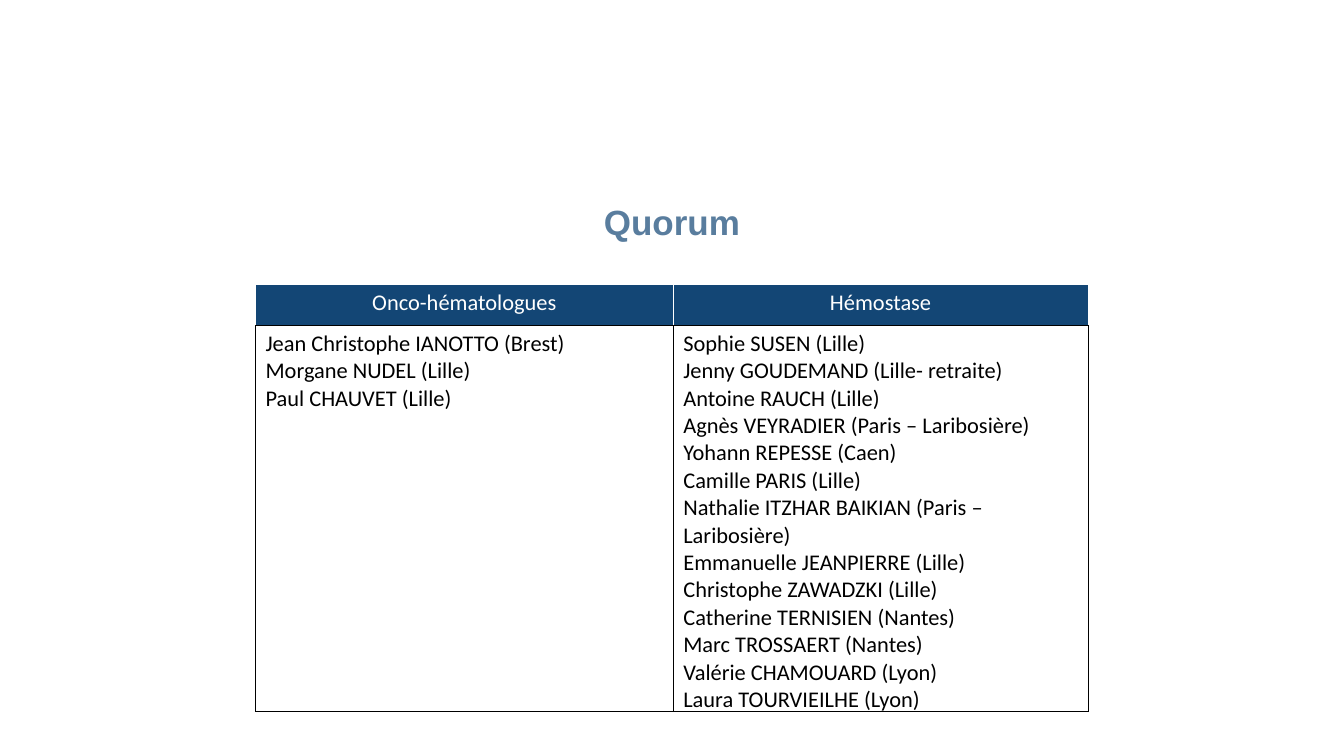
from lxml import etree
from pptx import Presentation
from pptx.dml.color import RGBColor
from pptx.enum import text
from pptx.oxml import ns
from pptx.util import Inches, Pt

NAVY, WHITE, BLACK = "134675", "FFFFFF", "000000"


def write(paragraph, words, font="Calibri", size=32, color=BLACK, bold=False, align="LEFT", alpha=None):
    paragraph.alignment = getattr(text.PP_ALIGN, align)
    paragraph.space_before = Pt(0)
    paragraph.line_spacing = 1.0
    span = paragraph.add_run()
    span.text = words
    span.font.name, span.font.size, span.font.bold = font, Pt(size), bold
    span.font.color.rgb = RGBColor.from_string(color)
    if alpha:
        rgb = span.font.color._xFill.find(ns.qn("a:srgbClr"))
        etree.SubElement(rgb, ns.qn("a:alpha"), val=str(alpha * 1000))


def draw_border(cell, side, color):
    line = etree.SubElement(cell._tc.get_or_add_tcPr(), ns.qn(f"a:ln{side}"), w=str(Pt(1)))
    fill = etree.SubElement(line, ns.qn("a:solidFill"))
    etree.SubElement(fill, ns.qn("a:srgbClr"), val=color)


columns = {
    "Onco-hématologues": [
        "Jean Christophe IANOTTO (Brest)",
        "Morgane NUDEL (Lille)",
        "Paul CHAUVET (Lille)",
    ],
    "Hémostase": [
        "Sophie SUSEN (Lille)",
        "Jenny GOUDEMAND (Lille- retraite)",
        "Antoine RAUCH (Lille)",
        "Agnès VEYRADIER (Paris – Laribosière)",
        "Yohann REPESSE (Caen)",
        "Camille PARIS (Lille)",
        "Nathalie ITZHAR BAIKIAN (Paris – Laribosière)",
        "Emmanuelle JEANPIERRE (Lille)",
        "Christophe ZAWADZKI (Lille)",
        "Catherine TERNISIEN (Nantes)",
        "Marc TROSSAERT (Nantes)",
        "Valérie CHAMOUARD (Lyon)",
        "Laura TOURVIEILHE (Lyon)",
    ],
}

deck = Presentation()
deck.slide_width, deck.slide_height = Inches(26.67), Inches(15)
page = deck.slides.add_slide(deck.slide_layouts[6])

title = page.shapes.add_textbox(Inches(4.22), Inches(3.97), Inches(18.23), Inches(8.96)).text_frame
title.word_wrap = True
title.margin_left = title.margin_top = title.margin_right = title.margin_bottom = 0
write(title.paragraphs[0], "Quorum", font="Arial", size=50, color=NAVY, bold=True, align="CENTER", alpha=70)

table = page.shapes.add_table(2, 2, Inches(5.07), Inches(5.64), Inches(16.52), Inches(8.48)).table
table.first_row = table.horz_banding = False
for column, width in zip(table.columns, (8.29, 8.23)):
    column.width = Inches(width)
for row, height in zip(table.rows, (0.81, 7.67)):
    row.height = Inches(height)

for index, (heading, members) in enumerate(columns.items()):
    header, body = table.cell(0, index), table.cell(1, index)
    for cell in (header, body):
        cell.margin_left = cell.margin_right = Inches(0.2)
        cell.margin_top = cell.margin_bottom = Inches(0.1)
    for side in "LRTB":
        draw_border(header, side, BLACK if side == "B" else WHITE)
        draw_border(body, side, BLACK)
    header.fill.solid()
    header.fill.fore_color.rgb = RGBColor.from_string(NAVY)
    body.fill.background()

    write(header.text_frame.paragraphs[0], heading, color=WHITE, align="CENTER")
    for number, member in enumerate(members):
        frame = body.text_frame
        write(frame.add_paragraph() if number else frame.paragraphs[0], member)

deck.save("out.pptx")
